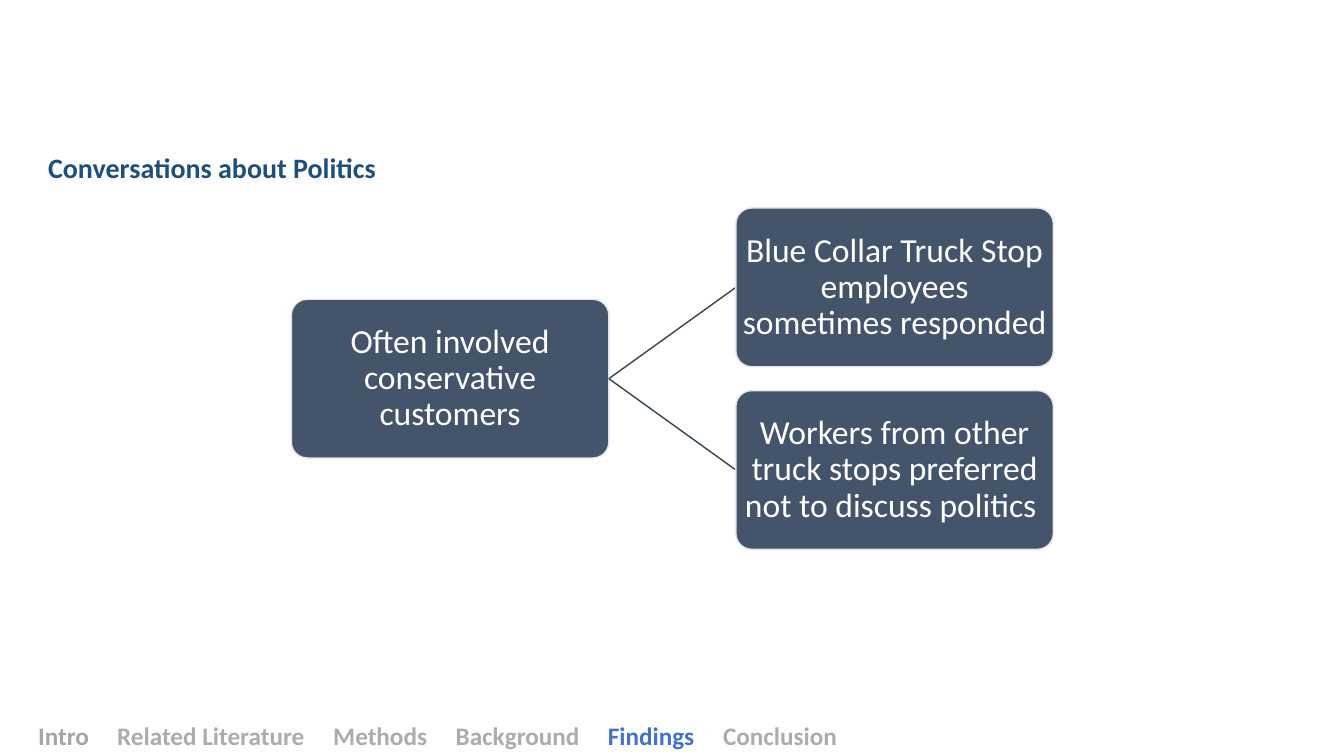
from lxml.etree import SubElement
from pptx import Presentation
from pptx.dml.color import RGBColor
from pptx.enum.shapes import MSO_CONNECTOR as Link, MSO_SHAPE as Shape
from pptx.enum.text import MSO_ANCHOR as Anchor, MSO_AUTO_SIZE as Fit, PP_ALIGN as Align
from pptx.oxml.ns import qn
from pptx.util import Pt

NAVY, SLATE, EDGE, WIRE = "1F4E79", "44546A", "E7E6E6", "364355"
WHITE, GRAY, DIM, BLUE = "FFFFFF", "A5A5A5", "AFABAB", "4472C4"

TABS = [
    ("Intro", GRAY, 0),
    ("Related Literature", DIM, 56.5),
    ("Methods", DIM, 210.8),
    ("Background", DIM, 298.3),
    ("Findings", BLUE, 407),
    ("Conclusion", DIM, 489.3),
]
ROOT = "Often involved conservative customers"
LEAVES = [
    "Blue Collar Truck Stop employees sometimes responded",
    "Workers from other truck stops preferred not to discuss politics ",
]


def color(code):
    return RGBColor.from_string(code)


def apply(item, style):
    for key, value in style.items():
        setattr(item, key, value)


def write(para, text, size, code, bold=False):
    run = para.add_run()
    run.text = text
    apply(run.font, {"name": "Calibri", "size": Pt(size), "bold": bold})
    run.font.color.rgb = color(code)


def frame(shape, anchor, left, side):
    text = shape.text_frame
    apply(text, {
        "word_wrap": True, "auto_size": Fit.NONE, "vertical_anchor": anchor,
        "margin_left": Pt(left), "margin_right": Pt(side),
        "margin_top": Pt(side), "margin_bottom": Pt(side),
    })
    return text.paragraphs[0]


def heading(slide, x, y, w, h):
    title = slide.shapes.title
    apply(title, {"left": Pt(x), "top": Pt(y), "width": Pt(w), "height": Pt(h)})
    para = frame(title, Anchor.BOTTOM, 34.3, 3.6)
    apply(para, {"alignment": Align.LEFT, "line_spacing": 1.0})
    write(para, "Conversations about Politics", 20, NAVY, True)


def node(slide, text, x, y, w, h):
    card = slide.shapes.add_shape(Shape.ROUNDED_RECTANGLE, Pt(x), Pt(y), Pt(w), Pt(h))
    card.adjustments[0] = 0.1
    card.shadow.inherit = False
    card.fill.solid()
    card.fill.fore_color.rgb = color(SLATE)
    card.line.color.rgb = color(EDGE)
    card.line.width = Pt(1)
    para = frame(card, Anchor.MIDDLE, 1.5, 1.5)
    apply(para, {"alignment": Align.CENTER, "line_spacing": 0.9})
    write(para, text, 24, WHITE)


def wire(slide, x, y, right, end):
    line = slide.shapes.add_connector(Link.STRAIGHT, Pt(x), Pt(y), Pt(right), Pt(end))
    line.line.color.rgb = color(WIRE)
    line.line.width = Pt(1)
    SubElement(line.element.spPr, qn("a:effectLst"))


def tree(slide, x, y, w):
    wide = w / 2.4
    high = wide / 2
    step = high * 1.15
    mid = y + (step * (len(LEAVES) - 1) + high) / 2
    right = x + w - wide
    node(slide, ROOT, x, mid - high / 2, wide, high)
    for row, text in enumerate(LEAVES):
        top = y + row * step
        wire(slide, x + wide, mid, right, top + high / 2)
        node(slide, text, right, top, wide, high)


def footer(slide, x, y, w, h):
    box = slide.shapes.add_textbox(Pt(x), Pt(y), Pt(w), Pt(h))
    para = frame(box, Anchor.TOP, 27.2, 3.6)
    stops = SubElement(para._p.get_or_add_pPr(), qn("a:tabLst"))
    for label, code, stop in TABS:
        if stop:
            SubElement(stops, qn("a:tab"), pos=str(Pt(stop)), algn="l")
            label = "\t" + label
        write(para, label, 18, code, True)


def main():
    deck = Presentation()
    apply(deck, {"slide_width": Pt(960), "slide_height": Pt(540)})
    slide = deck.slides.add_slide(deck.slide_layouts[5])
    heading(slide, 0, 55.4, 303, 80)
    tree(slide, 208.1, 148.6, 544.3)
    footer(slide, 0, 511.2, 651.6, 28.8)
    deck.save("out.pptx")


if __name__ == "__main__":
    main()
